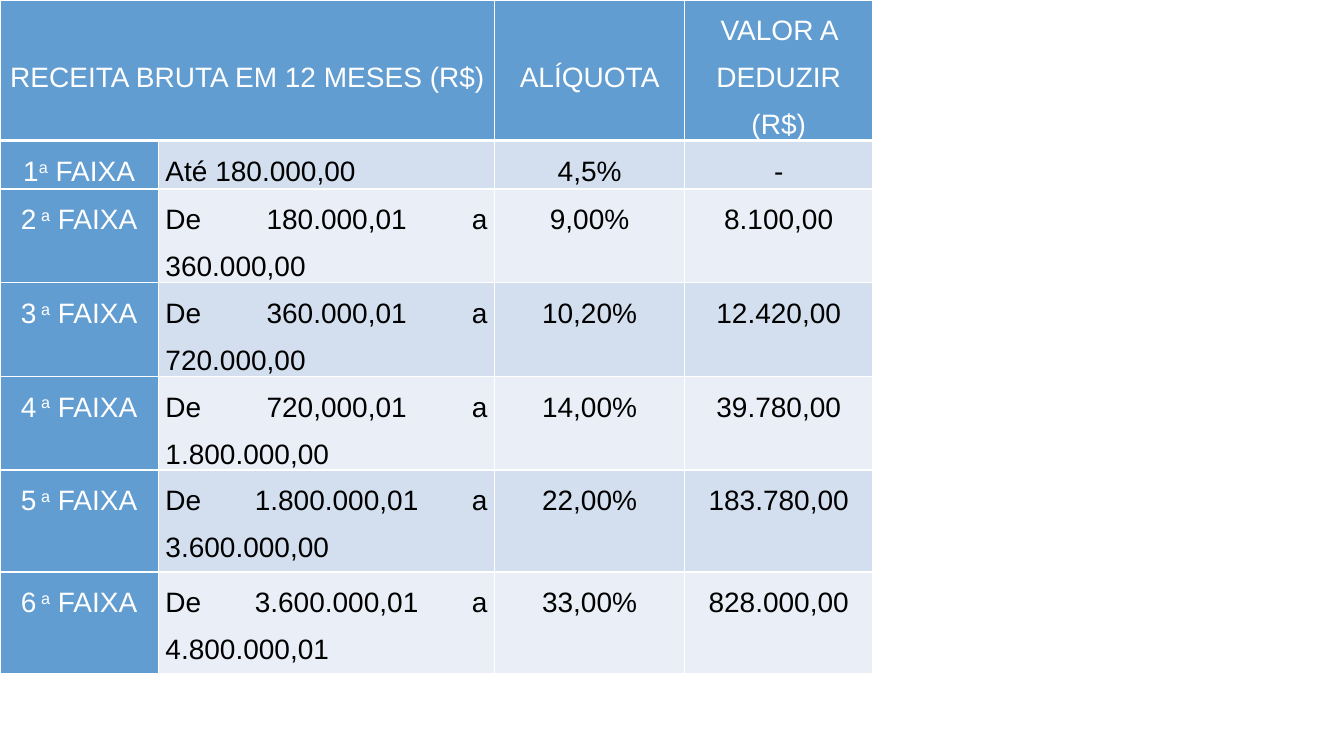
from dataclasses import dataclass

from lxml.etree import SubElement
from pptx import Presentation
from pptx.dml.color import RGBColor
from pptx.enum.text import MSO_ANCHOR, PP_ALIGN
from pptx.oxml.ns import qn
from pptx.table import Table, _Cell
from pptx.util import Cm, Pt


@dataclass(frozen=True)
class Theme:
    blue: str = "629DD1"
    bands: tuple[str, str] = ("D3DFEE", "EAEFF7")
    white: str = "FFFFFF"
    black: str = "000000"
    font: str = "Arial"
    size: int = 20
    line_spacing: float = 1.5
    border: int = 1
    header_border: int = 3


@dataclass(frozen=True)
class Bracket:
    ordinal: tuple[str, str]
    revenue: str
    rate: str
    deduction: str


@dataclass(frozen=True)
class CellStyle:
    fill: str
    color: str
    align: PP_ALIGN = PP_ALIGN.CENTER
    anchor: MSO_ANCHOR = MSO_ANCHOR.TOP
    bottom_border: int = 1


THEME = Theme()
COLUMN_WIDTHS = (3.99, 8.48, 4.78, 4.75)
ROW_HEIGHTS = (2.57, 1.22, 1.22, 1.22, 1.22, 2.57, 2.57)
TABLE_HEIGHT = 17.25
HEADERS = {0: "RECEITA BRUTA EM 12 MESES (R$)", 2: "ALÍQUOTA", 3: "VALOR A DEDUZIR (R$)"}
BRACKETS = (
    Bracket(("1", "a"), "Até 180.000,00", "4,5%", "-"),
    Bracket(("2", " a"), "De 180.000,01 a 360.000,00", "9,00%", "8.100,00"),
    Bracket(("3", " a"), "De 360.000,01 a 720.000,00", "10,20%", "12.420,00"),
    Bracket(("4", " a"), "De 720,000,01 a 1.800.000,00", "14,00%", "39.780,00"),
    Bracket(("5", " a"), "De 1.800.000,01 a 3.600.000,00", "22,00%", "183.780,00"),
    Bracket(("6", " a"), "De 3.600.000,01 a 4.800.000,01", "33,00%", "828.000,00"),
)


def set_attributes(target: object, values: dict[str, object]) -> None:
    for name, value in values.items():
        setattr(target, name, value)


def add_borders(cell: _Cell, bottom_width: int) -> None:
    properties = cell._tc.get_or_add_tcPr()
    for side in "LRTB":
        width = bottom_width if side == "B" else THEME.border
        line = SubElement(properties, qn(f"a:ln{side}"), w=str(Pt(width)))
        fill = SubElement(line, qn("a:solidFill"))
        SubElement(fill, qn("a:srgbClr"), val=THEME.white)


def write_cell(cell: _Cell, texts: tuple[str, ...], style: CellStyle) -> None:
    """Write the runs of a cell; the second run, if any, is superscript."""
    add_borders(cell, style.bottom_border)
    cell.fill.solid()
    cell.fill.fore_color.rgb = RGBColor.from_string(style.fill)
    set_attributes(cell, {
        "margin_left": Cm(0.18), "margin_right": Cm(0.18),
        "margin_top": 0, "margin_bottom": 0, "vertical_anchor": style.anchor,
    })
    paragraph = cell.text_frame.paragraphs[0]
    set_attributes(paragraph, {"alignment": style.align, "line_spacing": THEME.line_spacing})
    for position, text in enumerate(texts):
        run = paragraph.add_run()
        run.text = text
        set_attributes(run.font, {"name": THEME.font, "size": Pt(THEME.size), "bold": False})
        run.font.color.rgb = RGBColor.from_string(style.color)
        if position == 1:
            run._r.get_or_add_rPr().set("baseline", "30000")


def fill_header(table: Table) -> None:
    table.cell(0, 0).merge(table.cell(0, 1))
    style = CellStyle(THEME.blue, THEME.white, anchor=MSO_ANCHOR.MIDDLE,
                      bottom_border=THEME.header_border)
    for column in range(len(COLUMN_WIDTHS)):
        texts = (HEADERS[column],) if column in HEADERS else ()
        write_cell(table.cell(0, column), texts, style)


def fill_brackets(table: Table) -> None:
    label_style = CellStyle(THEME.blue, THEME.white)
    for index, bracket in enumerate(BRACKETS):
        band = THEME.bands[index % 2]
        value_style = CellStyle(band, THEME.black)
        row = (
            ((*bracket.ordinal, " FAIXA"), label_style),
            ((bracket.revenue,), CellStyle(band, THEME.black, PP_ALIGN.JUSTIFY)),
            ((bracket.rate,), value_style),
            ((bracket.deduction,), value_style),
        )
        for column, (texts, style) in enumerate(row):
            write_cell(table.cell(index + 1, column), texts, style)


def main() -> None:
    presentation = Presentation()
    set_attributes(presentation, {"slide_width": Cm(33.87), "slide_height": Cm(19.05)})
    slide = presentation.slides.add_slide(presentation.slide_layouts[6])

    # Tax bracket table
    shape = slide.shapes.add_table(len(ROW_HEIGHTS), len(COLUMN_WIDTHS), 0, 0,
                                   Cm(sum(COLUMN_WIDTHS)), Cm(TABLE_HEIGHT))
    table = shape.table
    set_attributes(table, {"first_row": False, "horz_banding": False})
    for column, width in zip(table.columns, COLUMN_WIDTHS):
        column.width = Cm(width)
    for row, height in zip(table.rows, ROW_HEIGHTS):
        row.height = Cm(height)
    shape.height = Cm(TABLE_HEIGHT)

    # Contents
    fill_header(table)
    fill_brackets(table)
    presentation.save("out.pptx")


if __name__ == "__main__":
    main()
